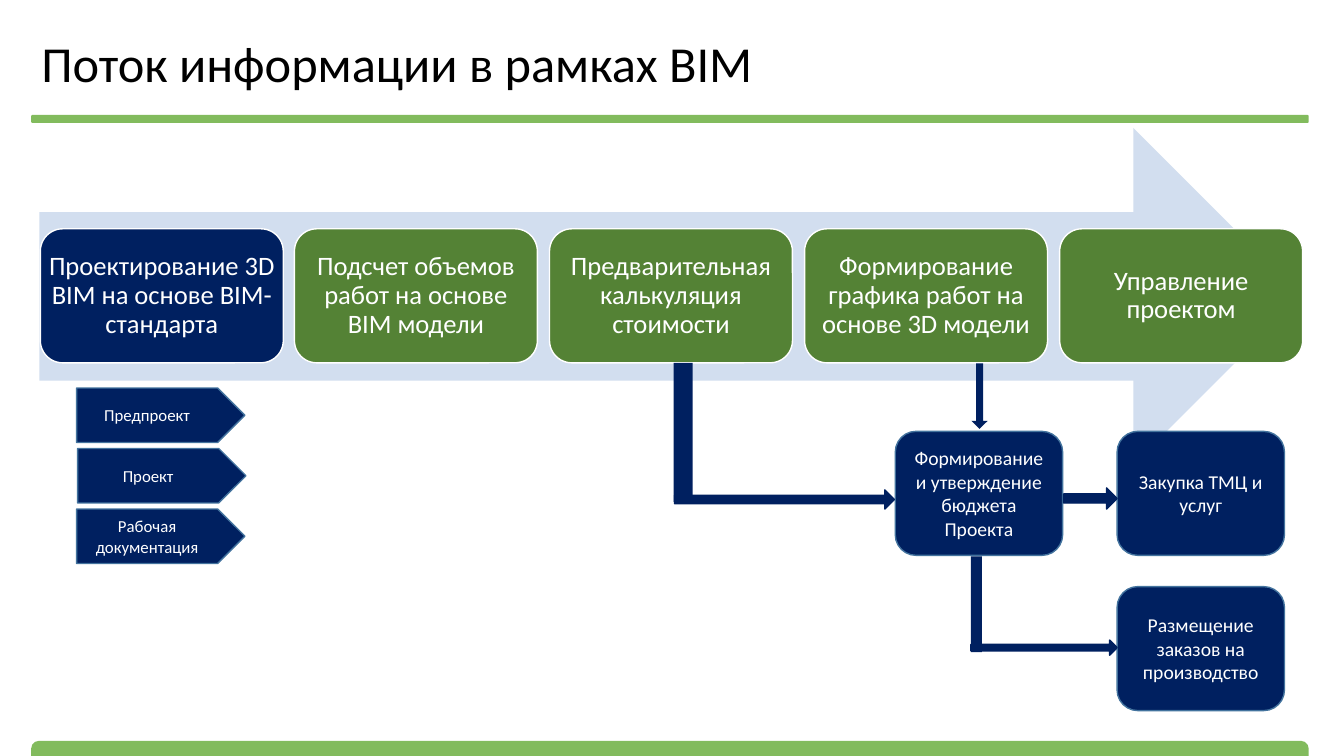
import dataclasses
import typing

import pptx
import pptx.dml.color
import pptx.enum.shapes
import pptx.enum.text
import pptx.util

SCALE = 9144
FONT = "Calibri"
KIND = pptx.enum.shapes.MSO_SHAPE
ALIGN = pptx.enum.text.PP_ALIGN
MIDDLE = pptx.enum.text.MSO_ANCHOR.MIDDLE
COLORS = {
    "white": "FFFFFF",
    "black": "000000",
    "navy": "002060",
    "green": "548235",
    "lime": "82BB5D",
    "pale": "D2DEEF",
    "steel": "43739E",
}
THIN = (0.435, 0.494)
FLAT = (1, 0.5)


@dataclasses.dataclass
class Block:
    left: int
    top: int
    width: int
    height: int
    kind: KIND = KIND.ROUNDED_RECTANGLE
    fill: str = "navy"
    line: typing.Optional[str] = None
    adjust: tuple = ()
    turn: int = 0
    text: str = ""
    size: int = 14
    space: float = 1.0
    pad: typing.Optional[int] = None


def px(count: int) -> pptx.util.Emu:
    return pptx.util.Emu(count * SCALE)


def color(name: str) -> pptx.dml.color.RGBColor:
    return pptx.dml.color.RGBColor.from_string(COLORS[name])


def write(frame, text: str, *, size: int, ink: str = "white", align=ALIGN.CENTER,
          space: float = 1.0, pad: typing.Optional[int] = None) -> None:
    frame.word_wrap = True
    frame.auto_size = pptx.enum.text.MSO_AUTO_SIZE.NONE
    frame.vertical_anchor = MIDDLE
    if pad is not None:
        frame.margin_left = frame.margin_right = px(pad)
        frame.margin_top = frame.margin_bottom = px(pad)
    line = frame.paragraphs[0]
    line.alignment = align
    line.line_spacing = space
    line.space_before = pptx.util.Pt(0)
    run = line.add_run()
    run.text = text
    run.font.name = FONT
    run.font.size = pptx.util.Pt(size)
    run.font.color.rgb = color(ink)


def draw(slide, block: Block) -> None:
    shape = slide.shapes.add_shape(block.kind, px(block.left), px(block.top),
                                   px(block.width), px(block.height))
    shape.shadow.inherit = False
    shape.rotation = block.turn
    for index, value in enumerate(block.adjust):
        shape.adjustments[index] = value
    shape.fill.solid()
    shape.fill.fore_color.rgb = color(block.fill)
    if block.line:
        shape.line.color.rgb = color(block.line)
        shape.line.width = pptx.util.Pt(1)
    else:
        shape.line.fill.background()
    if block.text:
        write(shape.text_frame, block.text, size=block.size, space=block.space, pad=block.pad)


def arrow(left: int, top: int, width: int, height: int,
          line: typing.Optional[str] = "navy", turn: int = 0) -> Block:
    return Block(left, top, width, height, KIND.RIGHT_ARROW, line=line, adjust=THIN, turn=turn)


def stem(left: int, top: int, width: int, height: int) -> Block:
    return Block(left, top, width, height, KIND.RECTANGLE)


def card(left: int, top: int, text: str) -> Block:
    return Block(left, top, 166, 123, line="steel", text=text)


def stage(index: int, text: str) -> Block:
    return Block(40 + 1011 * index // 4, 227, 241, 133, fill="green" if index else "navy",
                 line="white", text=text, size=19, space=0.9, pad=1)


def phase(index: int, text: str) -> Block:
    return Block(76 + index % 2, 385 + 60 * index, 167, 54, KIND.RIGHT_ARROW,
                 line="steel", adjust=FLAT, text=text, size=12)


STAGES = (
    "Проектирование 3D BIM на основе BIM-стандарта",
    "Подсчет объемов работ на основе BIM модели",
    "Предварительная калькуляция стоимости",
    "Формирование графика работ на основе 3D модели",
    "Управление проектом",
)
PHASES = ("Предпроект", "Проект", "Рабочая документация")

BLOCKS = [
    Block(31, 735, 1267, 15, KIND.ROUND_2_SAME_RECTANGLE, "lime", adjust=(0.5, 0)),
    Block(31, 114, 1267, 8, fill="lime"),
    Block(39, 127, 1252, 334, KIND.RIGHT_ARROW, "pale"),
    *(stage(index, text) for index, text in enumerate(STAGES)),
    card(888, 428, "Формирование и утверждение бюджета Проекта"),
    card(1108, 582, "Размещение заказов на производство"),
    arrow(939, 385, 65, 16, line=None, turn=90),
    stem(668, 360, 19, 138),
    arrow(669, 486, 218, 19),
    *(phase(index, text) for index, text in enumerate(PHASES)),
    card(1108, 428, "Закупка ТМЦ и услуг"),
    arrow(1055, 484, 53, 21),
    stem(963, 552, 11, 95),
    arrow(963, 635, 145, 15),
]


def main() -> None:
    deck = pptx.Presentation()
    deck.slide_width = pptx.util.Inches(13.33)
    deck.slide_height = pptx.util.Inches(7.5)
    slide = deck.slides.add_slide(deck.slide_layouts.get_by_name("Title Only"))
    title = slide.shapes.title
    title.left, title.top = px(31), px(33)
    title.width, title.height = px(1074), px(66)
    write(title.text_frame, "Поток информации в рамках BIM", size=36, ink="black",
          align=ALIGN.LEFT, space=0.9)
    for block in BLOCKS:
        draw(slide, block)
    deck.save("out.pptx")


if __name__ == "__main__":
    main()
